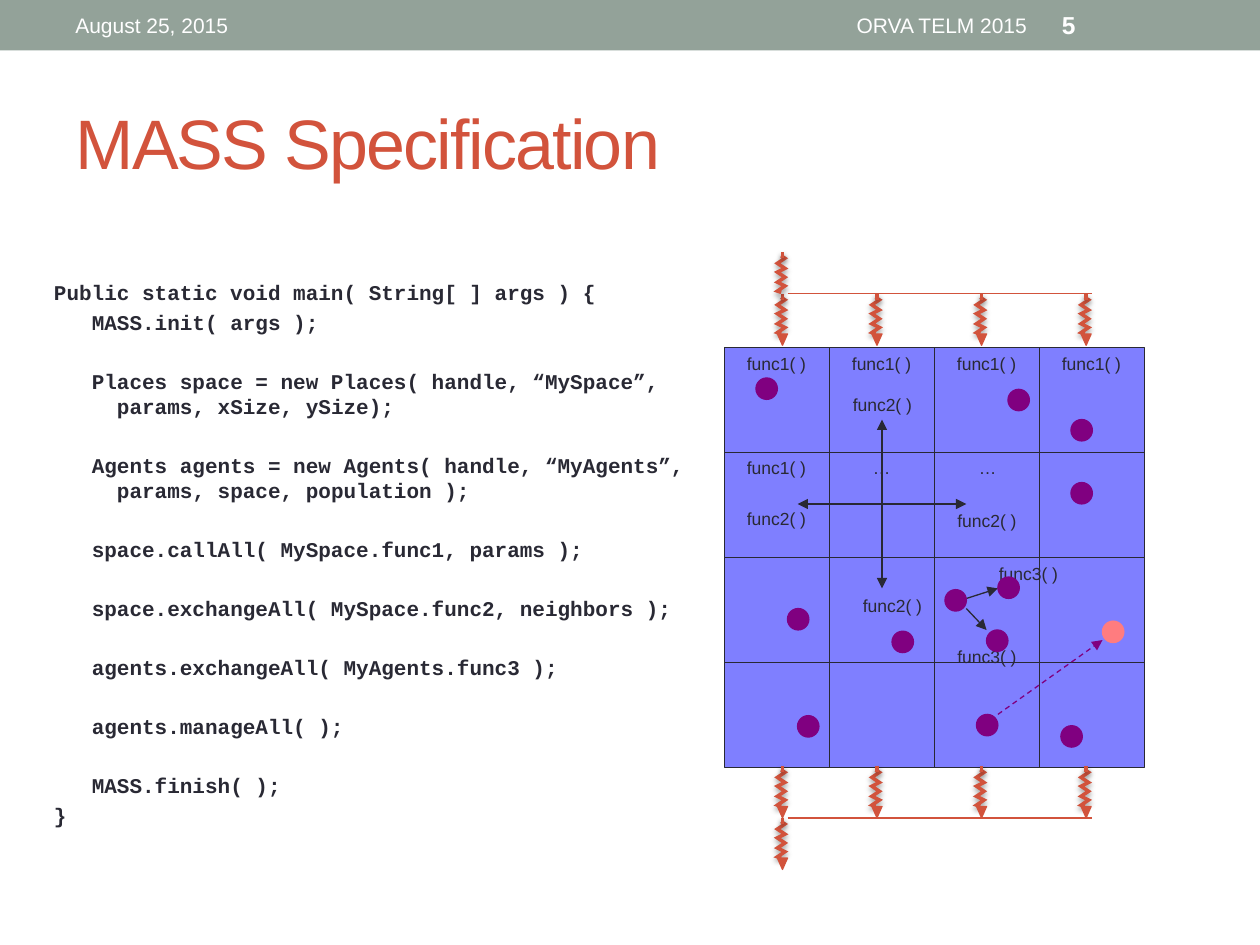
from dataclasses import dataclass
from itertools import product

import pptx
import pptx.dml.color
import pptx.enum.dml
import pptx.enum.shapes
import pptx.enum.text
import pptx.oxml
import pptx.oxml.ns
import pptx.util
from pptx.util import Inches

Shapes = pptx.enum.shapes.MSO_SHAPE
Align = pptx.enum.text.PP_ALIGN
Anchor = pptx.enum.text.MSO_ANCHOR


@dataclass(frozen=True)
class Theme:
    accent: str = "D2533C"
    band: str = "93A299"
    ink: str = "292934"
    white: str = "FFFFFF"
    place: str = "0000FF"
    agent: str = "800080"
    migrated: str = "FF7C7F"
    sans: str = "Arial"
    mono: str = "Courier New"
    title_size: float = 40
    number_size: float = 14
    body_size: float = 12
    label_size: float = 10


@dataclass(frozen=True)
class CodeLine:
    text: str
    nested: bool = True
    gap: bool = True  # an empty line's height above


@dataclass(frozen=True)
class Label:
    text: str
    left: float
    top: float
    width: float = 0.67


@dataclass(frozen=True)
class Arrow:
    start: tuple[float, float]
    end: tuple[float, float]


THEME = Theme()
CELL = 2.5 / 3
GRID_LEFT, GRID_TOP, GRID_COUNT = 5.75, 2.76, 4
THREADS = (6.21, 6.96, 7.79, 8.62)
ZIGZAG = [(-0.01, 0.03), (0.02, 0.05), (-0.04, 0.09), (0.02, 0.13), (-0.04, 0.16),
          (0.02, 0.2), (-0.04, 0.24), (0.02, 0.27), (-0.04, 0.31), (-0.01, 0.32)]
CODE = [
    CodeLine("Public static void main( String[ ] args ) {", nested=False, gap=False),
    CodeLine("MASS.init( args );", gap=False),
    CodeLine("Places space = new Places( handle, “MySpace”, params, xSize, ySize);"),
    CodeLine("Agents agents = new Agents( handle, “MyAgents”, params, space, population );"),
    CodeLine("space.callAll( MySpace.func1, params );"),
    CodeLine("space.exchangeAll( MySpace.func2, neighbors );"),
    CodeLine("agents.exchangeAll( MyAgents.func3 );"),
    CodeLine("agents.manageAll( );"),
    CodeLine("MASS.finish( );"),
    CodeLine("}", nested=False, gap=False),
]
NEIGHBOR_ARROWS = [Arrow((7, 4), end) for end in [(7.67, 4), (7, 3.33), (7, 4.67), (6.33, 4)]]
SPAWN_ARROWS = [Arrow((7.67, 4.75), (7.92, 4.67)), Arrow((7.67, 4.83), (7.83, 5))]
LABELS = [
    *[Label("func1( )", 5.83 + column * CELL, 2.75) for column in range(GRID_COUNT)],
    Label("func1( )", 5.83, 3.58),
    Label("…", 6.83, 3.58, 0.34), Label("…", 7.67, 3.58, 0.34),
    Label("func2( )", 5.83, 3.98), Label("func2( )", 6.67, 3.08),
    Label("func2( )", 7.5, 4), Label("func2( )", 6.75, 4.67),
    Label("func3( )", 7.83, 4.42), Label("func3( )", 7.5, 5.08),
]
AGENTS = [(7.5, 4.68), (8, 3.09), (7.08, 5.01), (8.5, 3.83), (6.25, 4.83), (8.5, 3.33),
          (8.42, 5.76), (6, 3), (6.33, 5.68), (7.83, 5), (7.92, 4.58), (7.75, 5.67)]


def color(code: str) -> pptx.dml.color.RGBColor:
    return pptx.dml.color.RGBColor.from_string(code)


def drawing_xml(tag: str, inner: str = "") -> object:
    namespace = pptx.oxml.ns.nsdecls("a")
    return pptx.oxml.parse_xml(f"<a:{tag} {namespace}>{inner}</a:{tag}>")


def set_effect(item, shadow: bool = False) -> None:
    soft = ('<a:outerShdw blurRad="39370" dist="20320" dir="5400000" rotWithShape="0">'
            '<a:srgbClr val="000000"><a:alpha val="38000"/></a:srgbClr></a:outerShdw>')
    item._element.spPr.append(drawing_xml("effectLst", soft if shadow else ""))


def set_line(item, code: str, width: float = 0.75) -> None:
    item.line.color.rgb = color(code)
    item.line.width = pptx.util.Pt(width)


def write(para, text: str, *, font: str = THEME.sans, size: float = THEME.body_size,
          code: str = THEME.ink, bold: bool = False, align=Align.LEFT):
    para.alignment = align
    span = para.add_run()
    span.text = text
    span.font.name, span.font.size, span.font.bold = font, pptx.util.Pt(size), bold
    span.font.color.rgb = color(code)
    return span


def add_box(page, left: float, top: float, width: float, height: float,
            wrap: bool = True, anchor=Anchor.TOP):
    box = page.shapes.add_textbox(Inches(left), Inches(top), Inches(width), Inches(height))
    box.text_frame.word_wrap = wrap
    box.text_frame.vertical_anchor = anchor
    return box.text_frame


def add_solid(page, kind, left: float, top: float, width: float, height: float,
              fill: str, outline: str):
    shape = page.shapes.add_shape(kind, Inches(left), Inches(top), Inches(width), Inches(height))
    shape.shadow.inherit = False
    shape.fill.solid()
    shape.fill.fore_color.rgb = color(fill)
    set_line(shape, outline)
    return shape


def add_line(page, line: Arrow, code: str, width: float = 0.75,
             head: bool = False, shadow: bool = False):
    connector = page.shapes.add_connector(
        pptx.enum.shapes.MSO_CONNECTOR.STRAIGHT,
        *(Inches(value) for value in (*line.start, *line.end)))
    set_line(connector, code, width)
    if head:
        tail = drawing_xml("tailEnd")
        tail.set("type", "triangle")
        connector.line._get_or_add_ln().append(tail)
    set_effect(connector, shadow)
    return connector


def add_thread(page, center: float, top: float, head: bool = True) -> None:
    points = [(Inches(center + x), Inches(top + y)) for x, y in ZIGZAG]
    builder = page.shapes.build_freeform(*points[0])
    builder.add_line_segments(points[1:], close=False)
    spring = builder.convert_to_shape()
    spring.fill.background()
    set_line(spring, THEME.accent, 2)
    miter = drawing_xml("miter")
    miter.set("lim", "800000")
    spring.line._get_or_add_ln().append(miter)
    set_effect(spring, shadow=True)
    add_line(page, Arrow((center, top), (center, top + 0.05)), THEME.accent, 2, shadow=True)
    if head:
        tip = add_solid(page, Shapes.ISOSCELES_TRIANGLE, center - 0.04, top + 0.32,
                        0.08, 0.09, THEME.accent, THEME.accent)
        tip.rotation = 180


def add_header(page) -> None:
    add_solid(page, Shapes.RECTANGLE, 0, 0, 10, 0.4, THEME.band, THEME.band).line.fill.background()
    for text, left, width, style in [
        ("August 25, 2015", 0.5, 3.17, {}),
        ("ORVA TELM 2015", 3.75, 4.5, {"align": Align.RIGHT}),
        ("5", 8.33, 1.17, {"size": THEME.number_size, "bold": True}),
    ]:
        frame = add_box(page, left, 0.02, width, 0.36, anchor=Anchor.MIDDLE)
        write(frame.paragraphs[0], text, code=THEME.white, **style)


def add_title(page) -> None:
    title = page.shapes.title
    title.left, title.top, title.width, title.height = map(Inches, (0.5, 0.58, 9, 1.08))
    title.text_frame.vertical_anchor = Anchor.MIDDLE
    span = write(title.text_frame.paragraphs[0], "MASS Specification",
                 size=THEME.title_size, code=THEME.accent)
    span.font._element.set("spc", "-100")


def add_code(page) -> None:
    frame = add_box(page, 0.33, 2.17, 5.25, 4.92)
    for index, line in enumerate(CODE):
        para = frame.add_paragraph() if index else frame.paragraphs[0]
        para.space_before = pptx.util.Pt(19.3 if line.gap else 2.5)
        properties = para._p.get_or_add_pPr()
        properties.set("marL", str(Inches(0.5 if line.nested else 0.2)))
        properties.set("indent", str(Inches(-0.2)))
        write(para, line.text, font=THEME.mono, bold=True)


def add_places(page) -> None:
    for row, column in product(range(GRID_COUNT), repeat=2):
        cell = add_solid(page, Shapes.RECTANGLE, GRID_LEFT + column * CELL,
                         GRID_TOP + row * CELL, CELL, CELL, THEME.place, THEME.ink)
        alpha = drawing_xml("alpha")
        alpha.set("val", "50000")
        cell.fill._xPr.find(".//" + pptx.oxml.ns.qn("a:srgbClr")).append(alpha)


def add_threads(page) -> None:
    # Fork above the grid, join below it
    for top, rail in [(2.33, 2.33), (6.08, 6.49)]:
        add_line(page, Arrow((6.25, rail), (8.67, rail)), THEME.accent, 1)
        for center in THREADS:
            add_thread(page, center, top)
    add_thread(page, THREADS[0], 2, head=False)
    add_thread(page, THREADS[0], 6.49)


def add_agents(page) -> None:
    for arrow in NEIGHBOR_ARROWS + SPAWN_ARROWS:
        add_line(page, arrow, THEME.ink, head=True)
    for label in LABELS:
        frame = add_box(page, label.left, label.top, label.width, 0.27, wrap=False)
        write(frame.paragraphs[0], label.text, size=THEME.label_size)
    # Migration to another place
    add_solid(page, Shapes.OVAL, 8.75, 4.93, 0.17, 0.17, THEME.migrated, THEME.migrated)
    migration = add_line(page, Arrow((7.92, 5.67), (8.75, 5.08)), THEME.agent, head=True)
    migration.line.dash_style = pptx.enum.dml.MSO_LINE.DASH
    for left, top in AGENTS:
        add_solid(page, Shapes.OVAL, left, top, 0.17, 0.17, THEME.agent, THEME.agent)


def main() -> None:
    deck = pptx.Presentation()
    deck.slide_width, deck.slide_height = Inches(10), Inches(7.5)
    page = deck.slides.add_slide(deck.slide_layouts[5])
    for draw in (add_header, add_title, add_code, add_places, add_threads, add_agents):
        draw(page)
    deck.save("out.pptx")


if __name__ == "__main__":
    main()
